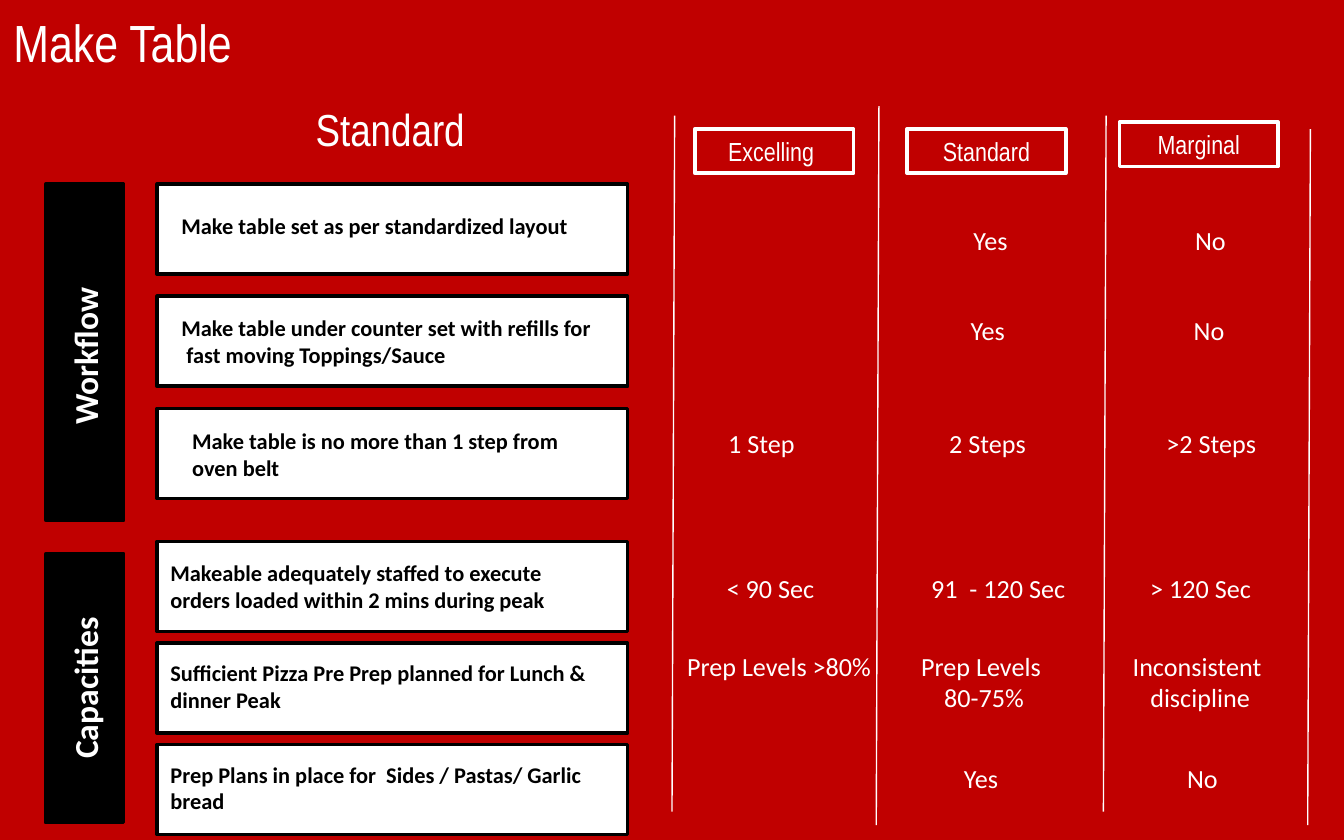
from lxml import etree
from pptx import Presentation
from pptx.dml.color import RGBColor
from pptx.enum.shapes import MSO_CONNECTOR, MSO_SHAPE
from pptx.enum.text import MSO_ANCHOR, MSO_AUTO_SIZE, PP_ALIGN
from pptx.oxml.ns import qn
from pptx.util import Inches, Pt

RECTANGLE = MSO_SHAPE.RECTANGLE
STRAIGHT = MSO_CONNECTOR.STRAIGHT
TOP, MIDDLE = MSO_ANCHOR.TOP, MSO_ANCHOR.MIDDLE
LEFT, CENTER = PP_ALIGN.LEFT, PP_ALIGN.CENTER
FIT_SHAPE = MSO_AUTO_SIZE.SHAPE_TO_FIT_TEXT

COLORS = {"red": "C00000", "white": "FFFFFF", "black": "000000"}
HEADING_FONT, BODY_FONT = "Arial Narrow", "Calibri"

# Left edges of the three rating columns, and the right edge of the last one
COLUMNS = [5.0, 6.52, 8.21, 9.73]
DIVIDER_SPANS = [(0.86, 6.04), (0.79, 6.14), (0.86, 6.04), (0.96, 6.14)]

# Rating, indent from the column edge, top
HEADERS = [("Excelling ", 0.17, 0.96), ("Standard", 0.23, 0.96), ("Marginal", 0.12, 0.91)]

CRITERION_LEFT, CRITERION_WIDTH, CRITERION_HEIGHT = 1.17, 3.5, 0.67

# Each criterion: text, left inset, top inset, top of its ratings,
# then per column the rating, its indent from the column edge and its width
SECTIONS = [
    {
        "name": "Workflow ", "bar_top": 1.37, "bar_length": 2.5,
        "first_row": 1.37, "row_pitch": 0.835,
        "criteria": [
            ("Make table set as per standardized layout", 0.18, 0.21, 1.62,
             [None, (" Yes", 0.58, 0.55), (" No", 0.54, 0.47)]),
            ("Make table under counter set with refills for\v fast moving Toppings/Sauce",
             0.18, 0.13, 2.29,
             [None, (" Yes", 0.56, 0.55), (" No", 0.53, 0.47)]),
            ("Make table is no more than 1 step from oven belt", 0.26, 0.14, 3.13,
             [("1 Step", 0.32, 0.74), (" 2 Steps", 0.4, 0.82), (">2 Steps", 0.37, 0.88)]),
        ],
    },
    {
        "name": "Capacities", "bar_top": 4.12, "bar_length": 2,
        "first_row": 4.03, "row_pitch": 0.755,
        "criteria": [
            ("Makeable adequately staffed to execute orders loaded within 2 mins during peak",
             0.1, 0.13, 4.21,
             [("< 90 Sec", 0.31, 0.86), ("91  - 120 Sec", 0.31, 1.21),
              ("> 120 Sec", 0.25, 0.96)]),
            ("Sufficient Pizza Pre Prep planned for Lunch & dinner Peak", 0.1, 0.12, 4.79,
             [(" Prep Levels >80%", -0.03, 1.63), ("Prep Levels\n 80-75%", 0.23, 1.1),
              (" Inconsistent  \ndiscipline", 0.07, 1.3)]),
            ("Prep Plans in place for  Sides / Pastas/ Garlic bread", 0.1, 0.12, 5.62,
             [None, (" Yes", 0.51, 0.55), (" No", 0.48, 0.47)]),
        ],
    },
]


def rgb(color):
    return RGBColor.from_string(COLORS[color])


def write(frame, text, font, size, color="white", bold=False, align=LEFT, anchor=TOP):
    frame.text = text
    frame.vertical_anchor = anchor
    for paragraph in frame.paragraphs:
        paragraph.alignment = align
        paragraph.font.name = font
        paragraph.font.size = Pt(size)
        paragraph.font.bold = bold
        paragraph.font.color.rgb = rgb(color)


def add_title(slide, text):
    title = slide.shapes.title
    title.left, title.top, title.width, title.height = 0, 0, Inches(9), Inches(0.62)
    write(title.text_frame, text, HEADING_FONT, 28, anchor=MIDDLE)


def add_box(slide, left, top, width, height, fill, line):
    box = slide.shapes.add_shape(RECTANGLE, *map(Inches, (left, top, width, height)))
    box.shadow.inherit = False
    box.fill.solid()
    box.fill.fore_color.rgb = rgb(fill)
    box.line.color.rgb = rgb(line)
    box.line.width = Pt(2)
    return box


def add_label(slide, text, left, top, width, height, font, size, align=LEFT):
    """Add a one-column text that keeps its own line breaks."""
    label = slide.shapes.add_textbox(*map(Inches, (left, top, width, height)))
    label.text_frame.word_wrap = False
    label.text_frame.auto_size = FIT_SHAPE
    write(label.text_frame, text, font, size, align=align)


def add_divider(slide, column, top, bottom):
    divider = slide.shapes.add_connector(
        STRAIGHT, *map(Inches, (column + 0.02, top, column, bottom)))
    divider.line.color.rgb = rgb("white")
    divider.line.width = Pt(0.75)
    etree.SubElement(divider.element.spPr, qn("a:effectLst"))


def add_section_bar(slide, name, top, length):
    """Add a bar that is laid out flat and turned to read upwards."""
    thickness, center = 0.58, 0.63
    bar = add_box(slide, center - length / 2, top + (length - thickness) / 2,
                  length, thickness, "black", "black")
    bar.rotation = 270
    write(bar.text_frame, name, BODY_FONT, 18, bold=True, align=CENTER, anchor=MIDDLE)


def add_criterion(slide, text, top, left_inset, top_inset):
    box = add_box(slide, CRITERION_LEFT, top, CRITERION_WIDTH, CRITERION_HEIGHT,
                  "white", "black")
    frame = box.text_frame
    frame.word_wrap = True
    frame.margin_left, frame.margin_top = Inches(left_inset), Inches(top_inset)
    frame.margin_right = Inches(0.2)
    write(frame, text, BODY_FONT, 12, "black", bold=True)


def add_ratings(slide, ratings, top):
    for column, rating in zip(COLUMNS, ratings):
        if rating:
            text, indent, width = rating
            two_lines = "\n" in text
            add_label(slide, text, column + indent, top, width,
                      0.57 if two_lines else 0.34, BODY_FONT, 14,
                      CENTER if two_lines else LEFT)


def add_section(slide, section):
    add_section_bar(slide, section["name"], section["bar_top"], section["bar_length"])
    for row, criterion in enumerate(section["criteria"]):
        text, left_inset, top_inset, ratings_top, ratings = criterion
        top = section["first_row"] + row * section["row_pitch"]
        add_criterion(slide, text, top, left_inset, top_inset)
        add_ratings(slide, ratings, ratings_top)


def main():
    deck = Presentation()
    deck.slide_width, deck.slide_height = Inches(10), Inches(6.25)
    slide = deck.slides.add_slide(deck.slide_layouts[5])
    slide.background.fill.solid()
    slide.background.fill.fore_color.rgb = rgb("red")

    add_title(slide, "Make Table")
    add_label(slide, "Standard", 2.25, 0.71, 1.47, 0.48, HEADING_FONT, 24)
    for column, (top, bottom) in zip(COLUMNS, DIVIDER_SPANS):
        add_divider(slide, column, top, bottom)
    for column, (rating, indent, top) in zip(COLUMNS, HEADERS):
        header = add_box(slide, column + indent, top, 1.18, 0.33, "red", "white")
        write(header.text_frame, rating, HEADING_FONT, 14, align=CENTER, anchor=MIDDLE)
    for section in SECTIONS:
        add_section(slide, section)

    deck.save("out.pptx")


if __name__ == "__main__":
    main()
